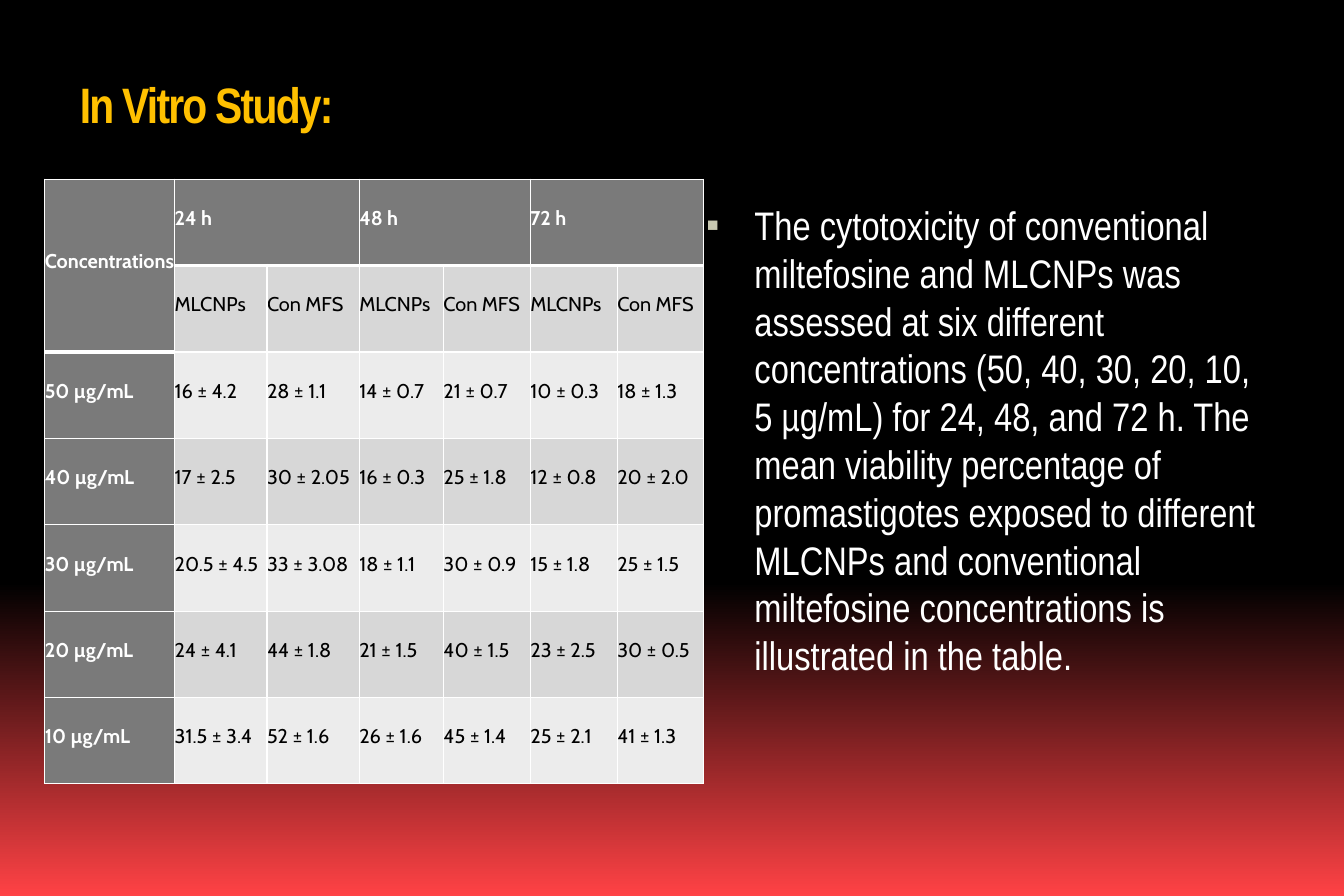
from copy import deepcopy

from lxml.etree import SubElement
from pptx import Presentation
from pptx.dml.color import RGBColor
from pptx.enum.text import MSO_ANCHOR as Anchor, PP_ALIGN as Align
from pptx.oxml.ns import qn
from pptx.util import Inches, Pt

TITLE = "In Vitro Study:"
BODY = (
    "The cytotoxicity of conventional miltefosine and MLCNPs was assessed at six "
    "different concentrations (50, 40, 30, 20, 10, 5 µg/mL) for 24, 48, and 72 h. "
    "The mean viability percentage of promastigotes exposed to different MLCNPs and "
    "conventional miltefosine concentrations is illustrated in the table."
)
ROWS = [
    ["Concentrations", "24 h", "", "48 h", "", "72 h", ""],
    [""] + ["MLCNPs", "Con MFS"] * 3,
    ["50 µg/mL", "16 ± 4.2", "28 ± 1.1", "14 ± 0.7", "21 ± 0.7", "10 ± 0.3", "18 ± 1.3"],
    ["40 µg/mL", "17 ± 2.5", "30 ± 2.05", "16 ± 0.3", "25 ± 1.8", "12 ± 0.8", "20 ± 2.0"],
    ["30 µg/mL", "20.5 ± 4.5", "33 ± 3.08", "18 ± 1.1", "30 ± 0.9", "15 ± 1.8", "25 ± 1.5"],
    ["20 µg/mL", "24 ± 4.1", "44 ± 1.8", "21 ± 1.5", "40 ± 1.5", "23 ± 2.5", "30 ± 0.5"],
    ["10 µg/mL", "31.5 ± 3.4", "52 ± 1.6", "26 ± 1.6", "45 ± 1.4", "25 ± 2.1", "41 ± 1.3"],
]
COL_WIDTHS = [1.45, 1.03, 1.03, 0.94, 0.97, 0.97, 0.96]
WHITE, BLACK, HEADER, BANDS = "FFFFFF", "000000", "7A7A7A", ["ECECEC", "D7D7D7"]
STOPS = [(0, BLACK), (0.65, BLACK), (1, "FF4245")]


def rgb(value):
    return RGBColor.from_string(value)


def set_all(target, values):
    for name, value in values.items():
        setattr(target, name, value)


def write(tf, text, color, font, frame, para):
    set_all(tf, frame)
    p = tf.paragraphs[0]
    set_all(p, para)
    r = p.add_run()
    r.text = text
    set_all(r.font, font)
    r.font.color.rgb = rgb(color)
    return p


def insets(x, y):
    return dict(margin_left=Inches(x), margin_right=Inches(x),
                margin_top=Inches(y), margin_bottom=Inches(y))


def add_background(s):
    fill = s.background.fill
    fill.gradient()
    fill.gradient_angle = 270
    stop_list = s.element.find(".//" + qn("a:gsLst"))
    stop_list.append(deepcopy(stop_list[0]))
    for stop, (position, color) in zip(fill.gradient_stops, STOPS):
        stop.position = position
        stop.color.rgb = rgb(color)


def add_title(s, box):
    sp = s.shapes.title
    set_all(sp, dict(zip(("left", "top", "width", "height"), map(Inches, box))))
    p = write(sp.text_frame, TITLE, "FFC000",
              dict(name="Arial Narrow", size=Pt(40), bold=True),
              dict(insets(0.14, 0.07), word_wrap=True, vertical_anchor=Anchor.TOP),
              dict(alignment=Align.LEFT))
    p.runs[0].font._element.set("spc", "-140")


def add_body(s, box):
    sp = s.shapes.add_textbox(*map(Inches, box))
    p = write(sp.text_frame, BODY, WHITE, dict(name="Arial Narrow", size=Pt(32)),
              dict(insets(0.14, 0.07), word_wrap=True, vertical_anchor=Anchor.TOP),
              dict(alignment=Align.LEFT, space_before=Pt(10)))
    pPr = p._p.get_or_add_pPr()
    pPr.set("marL", str(Inches(0.64)))
    pPr.set("indent", str(Inches(-0.54)))
    SubElement(SubElement(pPr, qn("a:buClr")), qn("a:srgbClr"), val="C8C8B1")
    SubElement(pPr, qn("a:buSzPct"), val="95000")
    SubElement(pPr, qn("a:buFont"), typeface="Arial")
    SubElement(pPr, qn("a:buChar"), char="▪")


def add_borders(cell, thick_sides):
    tcPr = cell._tc.get_or_add_tcPr()
    for side in "LRTB":
        width = Pt(3 if side in thick_sides else 1)
        ln = SubElement(tcPr, qn("a:ln" + side), w=str(width))
        SubElement(SubElement(ln, qn("a:solidFill")), qn("a:srgbClr"), val=WHITE)


def thick_sides(row, col):
    below_header = 2 if col == 0 else 1
    return ("B" if row < below_header else "") + ("T" if row == below_header else "")


def add_viability_table(s, box):
    table = s.shapes.add_table(len(ROWS), len(COL_WIDTHS), *map(Inches, box)).table
    for column, width in zip(table.columns, COL_WIDTHS):
        column.width = Inches(width)
    for i, texts in enumerate(ROWS):
        for j, text in enumerate(texts):
            cell = table.cell(i, j)
            header = i == 0 or j == 0
            set_all(cell, dict(insets(0, 0), vertical_anchor=Anchor.MIDDLE))
            add_borders(cell, thick_sides(i, j))
            cell.fill.solid()
            cell.fill.fore_color.rgb = rgb(HEADER if header else BANDS[i % 2])
            if text:
                write(cell.text_frame, text, WHITE if header else BLACK,
                      dict(name="Cabin", size=Pt(16), bold=header), {},
                      dict(alignment=Align.JUSTIFY, line_spacing=Pt(13)))
    table.cell(0, 0).merge(table.cell(1, 0))
    for j in range(1, len(COL_WIDTHS), 2):
        table.cell(0, j).merge(table.cell(0, j + 1))


def main():
    prs = Presentation()
    set_all(prs, dict(slide_width=Inches(15), slide_height=Inches(10)))
    s = prs.slides.add_slide(prs.slide_layouts[5])
    add_background(s)
    add_title(s, (0.75, 0.75, 13.5, 1))
    add_body(s, (7.64, 2.17, 6.62, 7.01))
    add_viability_table(s, (0.5, 2, sum(COL_WIDTHS), 6.75))
    prs.save("out.pptx")


if __name__ == "__main__":
    main()
